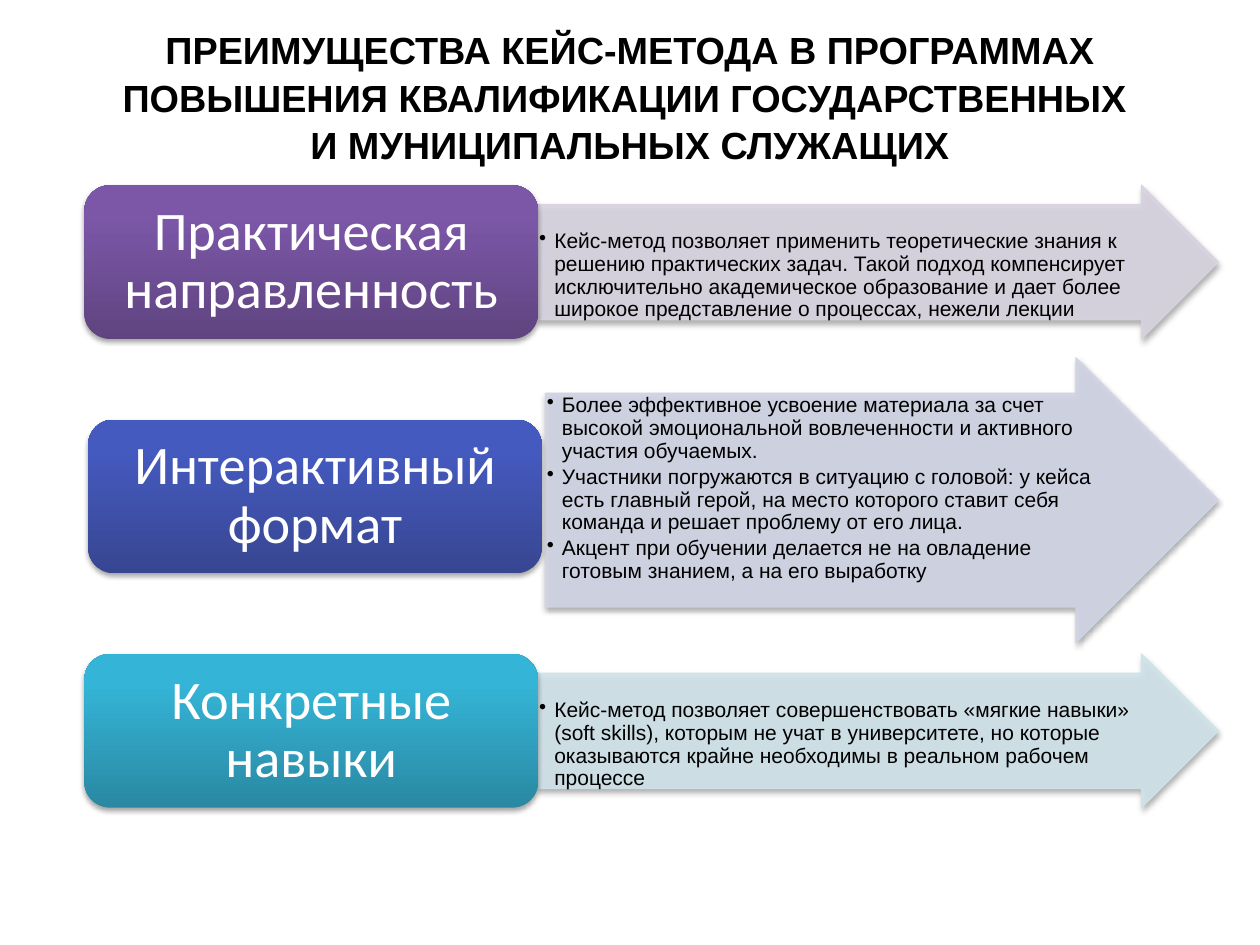
from lxml.etree import SubElement
from pptx import Presentation
from pptx.dml.color import RGBColor
from pptx.enum.shapes import MSO_SHAPE as SHAPE
from pptx.enum.text import MSO_ANCHOR as ANCHOR, PP_ALIGN as ALIGN
from pptx.oxml.ns import qn
from pptx.util import Inches, Pt

rgb = RGBColor.from_string


def add_shadowed(kind, x, y, w, h):
    s = slide.shapes.add_shape(kind, Inches(x), Inches(y), Inches(w), Inches(h))
    s.shadow.inherit = False
    effects = s._element.spPr.find(qn("a:effectLst"))
    shadow = SubElement(effects, qn("a:outerShdw"), blurRad=str(Pt(3.1)),
                        dist=str(Pt(1.8)), dir="5400000", rotWithShape="0")
    color = SubElement(shadow, qn("a:srgbClr"), val="000000")
    SubElement(color, qn("a:alpha"), val="35000")
    return s


def format_text(tf, size, color, font, insets, anchor):
    tf.word_wrap = True
    tf.vertical_anchor = anchor
    tf.margin_left, tf.margin_top, tf.margin_right, tf.margin_bottom = map(Inches, insets)
    for p in tf.paragraphs:
        for r in p.runs:
            r.font.size, r.font.name = Pt(size), font
            r.font.color.rgb = rgb(color)


prs = Presentation()
prs.slide_width, prs.slide_height = Inches(10), Inches(7.5)
slide = prs.slides.add_slide(prs.slide_layouts[5])

title = slide.shapes.title
title.left, title.top, title.width, title.height = map(Inches, (0.5, 0.2, 9, 1.12))
tf = title.text_frame
tf.text = ("ПРЕИМУЩЕСТВА КЕЙС-МЕТОДА В ПРОГРАММАХ ПОВЫШЕНИЯ КВАЛИФИКАЦИИ "
           "ГОСУДАРСТВЕННЫХ \vИ МУНИЦИПАЛЬНЫХ СЛУЖАЩИХ")
format_text(tf, 21.6, "000000", "Arial", (0.1, 0, 0.1, 0), ANCHOR.MIDDLE)
tf.paragraphs[0].alignment = ALIGN.CENTER
tf.paragraphs[0].line_spacing = 1.05
for r in tf.paragraphs[0].runs:
    r.font.bold = True

ARROW_RIGHT = 9.67
LABEL_W, LABEL_H = 3.6, 1.22

# label, label x and y, gradient from bottom to top,
# arrow x, y and height, arrow colour, text width and top inset, points
rows = [
    ("Практическая направленность", 0.67, 1.47, ("5F4480", "7C57A8"),
     4.27, 1.47, 1.22, "D8D3E0", 4.94, 0.21,
     ["Кейс-метод позволяет применить теоретические знания к решению практических задач. "
      "Такой подход компенсирует исключительно академическое образование и дает более "
      "широкое представление о процессах, нежели лекции"]),
    ("Интерактивный формат", 0.7, 3.33, ("374691", "455ABF"),
     4.33, 2.84, 2.26, "D1D4E5", 4.49, 0.01,
     ["Более эффективное усвоение материала за счет высокой эмоциональной вовлеченности "
      "и активного участия обучаемых.",
      "Участники погружаются в ситуацию с головой: у кейса есть главный герой, на место "
      "которого ставит себя команда и решает проблему от его лица.",
      "Акцент при обучении делается не на овладение готовым знанием, а на его выработку"]),
    ("Конкретные навыки", 0.67, 5.19, ("2A88A2", "34B4D6"),
     4.27, 5.19, 1.22, "D0E3EA", 4.94, 0.21,
     ["Кейс-метод позволяет совершенствовать «мягкие навыки» (soft skills), которым не учат "
      "в университете, но которые оказываются крайне необходимы в реальном рабочем процессе"]),
]

for (label, label_x, label_y, gradient, arrow_x, arrow_y, arrow_h, arrow_color,
     text_w, top_inset, points) in rows:
    arrow = add_shadowed(SHAPE.RIGHT_ARROW, arrow_x, arrow_y, ARROW_RIGHT - arrow_x, arrow_h)
    arrow.adjustments[0], arrow.adjustments[1] = 0.75, 0.5
    arrow.fill.solid()
    arrow.fill.fore_color.rgb = rgb(arrow_color)
    arrow.line.color.rgb = rgb(arrow_color)
    arrow.line.width = Pt(0.75)
    for color in arrow._element.spPr.findall(".//" + qn("a:solidFill") + "/" + qn("a:srgbClr")):
        SubElement(color, qn("a:alpha"), val="90000")

    # The text fills the arrow's shaft, three quarters of its height
    box = slide.shapes.add_textbox(Inches(arrow_x), Inches(arrow_y + arrow_h / 8),
                                   Inches(text_w), Inches(arrow_h * 0.75))
    tf = box.text_frame
    tf.text = "\n".join(points)
    format_text(tf, 12, "000000", "Arial", (0.01, top_inset, 0.01, 0.01), ANCHOR.TOP)
    for p in tf.paragraphs:
        p.line_spacing = 0.9
        p.space_after = Pt(2)
        pPr = p._p.get_or_add_pPr()
        pPr.set("marL", str(Inches(0.12)))
        pPr.set("indent", str(-Inches(0.12)))
        SubElement(pPr, qn("a:buChar"), char="•")

    s = add_shadowed(SHAPE.ROUNDED_RECTANGLE, label_x, label_y, LABEL_W, LABEL_H)
    s.fill.gradient()
    s.fill.gradient_angle = 90
    for stop, color, position in zip(s.fill.gradient_stops, gradient, (0, 0.8)):
        stop.color.rgb = rgb(color)
        stop.position = position
    s.line.fill.background()
    tf = s.text_frame
    tf.text = label
    format_text(tf, 31, "FFFFFF", "Calibri", (0.13, 0.06, 0.13, 0.06), ANCHOR.MIDDLE)
    tf.paragraphs[0].alignment = ALIGN.CENTER
    tf.paragraphs[0].line_spacing = 0.9

prs.save("out.pptx")
